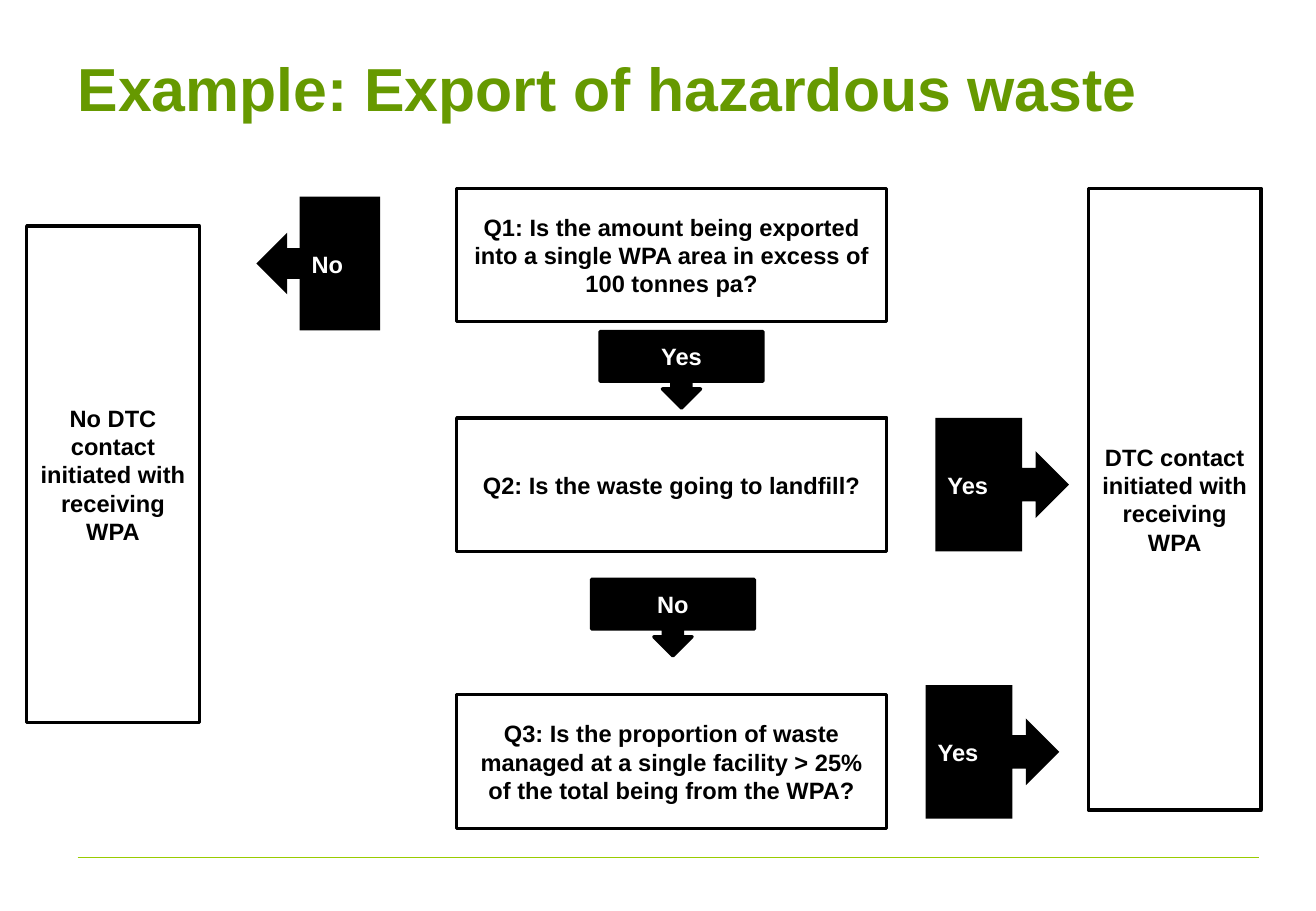
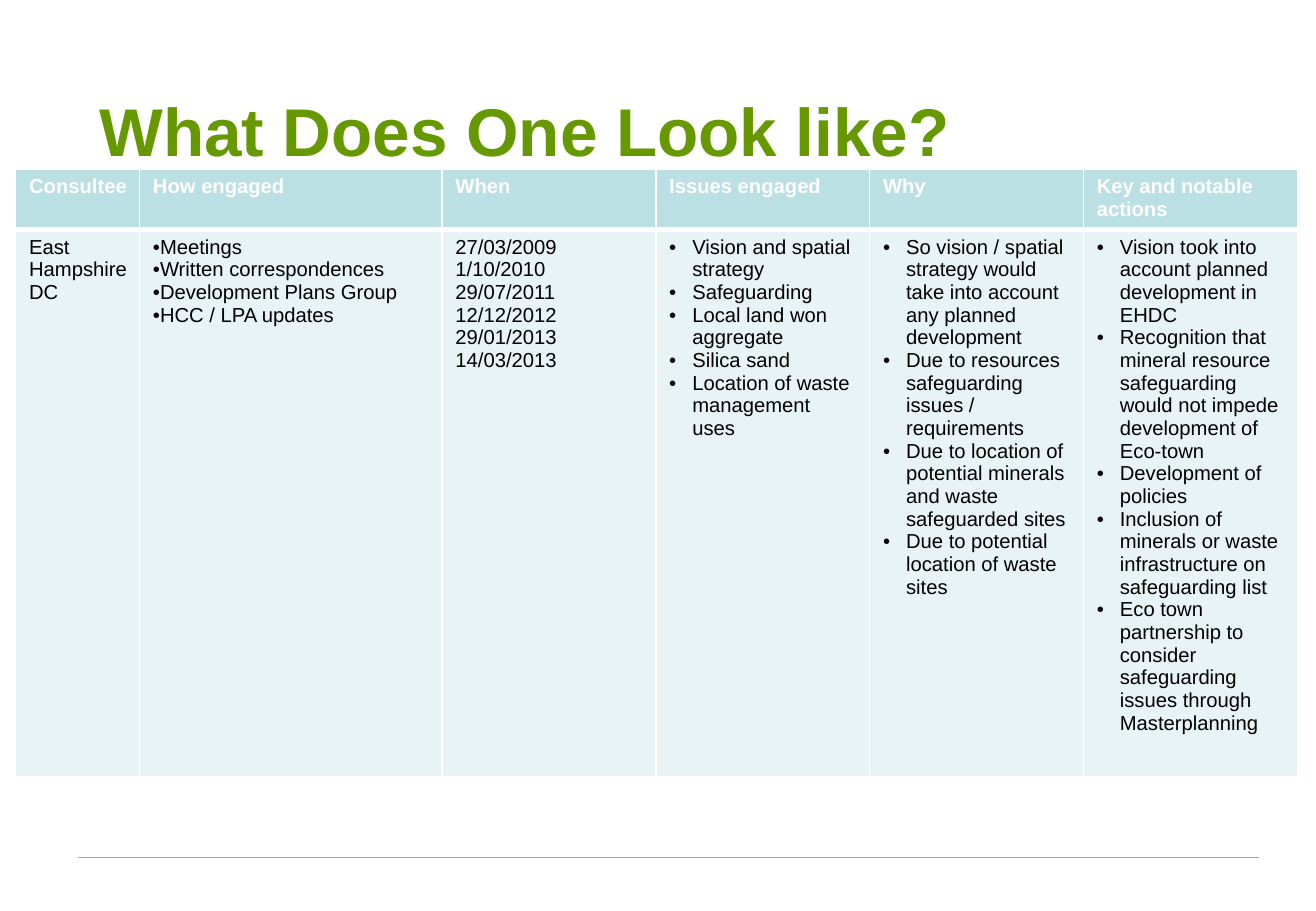
from dataclasses import dataclass
from typing import Optional

from lxml.etree import SubElement
from pptx import Presentation
from pptx.dml.color import RGBColor
from pptx.enum.shapes import MSO_CONNECTOR, MSO_SHAPE
from pptx.enum.text import MSO_ANCHOR as Anchor, PP_ALIGN as Align
from pptx.oxml.ns import qn
from pptx.util import Inches, Pt

FONT = "Arial"
BLACK = RGBColor(0x00, 0x00, 0x00)
WHITE = RGBColor(0xFF, 0xFF, 0xFF)
TITLE_GREEN = RGBColor(0x66, 0x99, 0x00)
RULE_GREEN = RGBColor(0x99, 0xCC, 0x00)
HEADER_TEAL = RGBColor(0xBB, 0xE0, 0xE3)
BODY_TEAL = RGBColor(0xE7, 0xF3, 0xF4)

CELL = 0.1
SLIDE_COLUMNS, SLIDE_ROWS = 108.33, 75
RULE_LEFT, RULE_RIGHT, RULE_ROW = 6.4, 103.6, 70.6
QUESTION_LEFT, QUESTION_WIDTH, QUESTION_HEIGHT = 37.6, 35.4, 11
OUTCOME_WIDTH = 14.2
BULLET_INDENT = 1.9


@dataclass(frozen=True)
class Area:
    left: float
    top: float
    width: float
    height: float

    def lengths(self):
        return tuple(map(grid, (self.left, self.top, self.width, self.height)))


@dataclass(frozen=True)
class Block:
    text: str
    area: Area
    kind: MSO_SHAPE = MSO_SHAPE.RECTANGLE
    fill: RGBColor = WHITE
    ink: RGBColor = BLACK
    outlined: bool = True
    align: Align = Align.CENTER


@dataclass(frozen=True)
class Column:
    header: str
    width: float
    lines: tuple[str, ...]
    left_indent: Optional[float] = None


def grid(cells: float):
    return Inches(cells * CELL)


def question(text: str, top: float) -> Block:
    return Block(text, Area(QUESTION_LEFT, top, QUESTION_WIDTH, QUESTION_HEIGHT))


def outcome(text: str, left: float, top: float, height: float) -> Block:
    return Block(text, Area(left, top, OUTCOME_WIDTH, height))


def down_answer(text: str, left: float, top: float) -> Block:
    return Block(text, Area(left, top, 13.4, 6.3), MSO_SHAPE.DOWN_ARROW_CALLOUT, BLACK, WHITE)


def side_answer(text: str, left: float, top: float, width: float = 11,
                kind: MSO_SHAPE = MSO_SHAPE.RIGHT_ARROW_CALLOUT) -> Block:
    return Block(text, Area(left, top, width, 11), kind, BLACK, WHITE, False, Align.LEFT)


BLOCKS = (
    outcome("DTC contact initiated with receiving WPA", 89.6, 15.5, 51.2),
    question("Q1: Is the amount being exported into a single WPA area in excess of 100 tonnes pa?", 15.5),
    question("Q2: Is the waste going to landfill?", 34.4),
    question("Q3: Is the proportion of waste managed at a single facility > 25% "
             "of the total being from the WPA?", 57.2),
    outcome("No DTC contact initiated with receiving WPA", 2.2, 18.6, 40.9),
    down_answer("Yes", 49.4, 27.3),
    down_answer("No", 48.7, 47.7),
    side_answer("Yes", 77, 34.4),
    side_answer("Yes", 76.2, 56.4),
    side_answer("No", 21.1, 16.2, 10.2, MSO_SHAPE.LEFT_ARROW_CALLOUT),
)

COLUMNS = (
    Column("Consultee", 10.2, ("East Hampshire DC",)),
    Column("How engaged", 24.9, (
        "Meetings",
        "Written correspondences",
        "Development Plans Group",
        "HCC / LPA updates",
    ), 0),
    Column("When", 17.6, (
        "27/03/2009", "1/10/2010", "29/07/2011", "12/12/2012", "29/01/2013", "14/03/2013",
    )),
    Column("Issues engaged", 17.6, (
        "Vision and spatial strategy",
        "Safeguarding",
        "Local land won aggregate",
        "Silica sand",
        "Location of waste management uses",
    ), BULLET_INDENT),
    Column("Why", 17.6, (
        "So vision / spatial strategy would take into account any planned development",
        "Due to resources safeguarding issues / requirements",
        "Due to location of potential minerals and waste safeguarded sites",
        "Due to potential location of waste sites",
    ), BULLET_INDENT),
    Column("Key and notable actions", 17.6, (
        "Vision took into account planned development in EHDC",
        "Recognition that mineral resource safeguarding would not impede development of Eco-town",
        "Development of policies",
        "Inclusion of minerals or waste infrastructure on safeguarding list",
        "Eco town partnership to consider safeguarding issues through Masterplanning",
    ), BULLET_INDENT),
)


def write(text_frame, text: str, size: float, color: RGBColor, bold: bool = True,
          align: Align = Align.LEFT) -> None:
    text_frame.text = text
    for paragraph in text_frame.paragraphs:
        paragraph.alignment = align
        for run in paragraph.runs:
            run.font.name = FONT
            run.font.size = Pt(size)
            run.font.bold = bold
            run.font.color.rgb = color


def add_titled_slide(presentation, title: str, area: Area, size: float):
    slide = presentation.slides.add_slide(presentation.slide_layouts[6])
    rule = slide.shapes.add_connector(
        MSO_CONNECTOR.STRAIGHT, grid(RULE_LEFT), grid(RULE_ROW), grid(RULE_RIGHT), grid(RULE_ROW))
    rule.line.color.rgb = RULE_GREEN
    rule.line.width = Pt(0.75)
    SubElement(rule._element.spPr, qn("a:effectLst"))
    text_frame = slide.shapes.add_textbox(*area.lengths()).text_frame
    text_frame.word_wrap = True
    text_frame.vertical_anchor = Anchor.MIDDLE
    write(text_frame, title, size, TITLE_GREEN)
    return slide


def draw_block(slide, block: Block) -> None:
    shape = slide.shapes.add_shape(block.kind, *block.area.lengths())
    shape.shadow.inherit = False
    shape.fill.solid()
    shape.fill.fore_color.rgb = block.fill
    if block.outlined:
        shape.line.color.rgb = BLACK
        shape.line.width = Pt(2)
    else:
        shape.line.fill.background()
    shape.text_frame.word_wrap = True
    shape.text_frame.vertical_anchor = Anchor.MIDDLE
    write(shape.text_frame, block.text, 14, block.ink, align=block.align)


def set_borders(cell, **widths: float) -> None:
    properties = cell._tc.get_or_add_tcPr()
    for side in "LRTB":
        border = SubElement(properties, qn(f"a:ln{side}"), w=str(Pt(widths.get(side, 1))))
        fill = SubElement(border, qn("a:solidFill"))
        SubElement(fill, qn("a:srgbClr"), val=str(WHITE))


def style_cell(cell, text: str, fill: RGBColor, ink: RGBColor, bold: bool) -> None:
    cell.fill.solid()
    cell.fill.fore_color.rgb = fill
    cell.margin_left = Inches(0.11)
    write(cell.text_frame, text, 12, ink, bold)


def add_bullets(text_frame, left_indent: float) -> None:
    for paragraph in text_frame.paragraphs:
        properties = paragraph._p.get_or_add_pPr()
        properties.set("marL", str(grid(left_indent)))
        properties.set("indent", str(-grid(BULLET_INDENT)))
        SubElement(properties, qn("a:buFont"), typeface=FONT)
        SubElement(properties, qn("a:buChar"), char="•")


def draw_table(slide, columns: tuple[Column, ...], left: float, top: float,
               row_heights: tuple[float, float]) -> None:
    area = Area(left, top, sum(column.width for column in columns), sum(row_heights))
    table = slide.shapes.add_table(len(row_heights), len(columns), *area.lengths()).table
    table.horz_banding = False
    for row, height in zip(table.rows, row_heights):
        row.height = grid(height)
    for index, column in enumerate(columns):
        table.columns[index].width = grid(column.width)
        header, body = table.cell(0, index), table.cell(1, index)
        set_borders(header, B=3)
        set_borders(body, T=3)
        style_cell(header, column.header, HEADER_TEAL, WHITE, True)
        style_cell(body, "\n".join(column.lines), BODY_TEAL, BLACK, False)
        if column.left_indent is not None:
            add_bullets(body.text_frame, column.left_indent)


def main() -> None:
    presentation = Presentation()
    presentation.slide_width = grid(SLIDE_COLUMNS)
    presentation.slide_height = grid(SLIDE_ROWS)
    flow_slide = add_titled_slide(
        presentation, "Example: Export of hazardous waste", Area(5.4, 1.3, 97.5, 11.8), 36)
    for block in BLOCKS:
        draw_block(flow_slide, block)
    table_slide = add_titled_slide(
        presentation, "What Does One Look like?", Area(7.2, 4.4, 92.1, 12.5), 40)
    draw_table(table_slide, COLUMNS, 1.3, 13.9, (4.7, 42))
    presentation.save("out.pptx")


if __name__ == "__main__":
    main()
